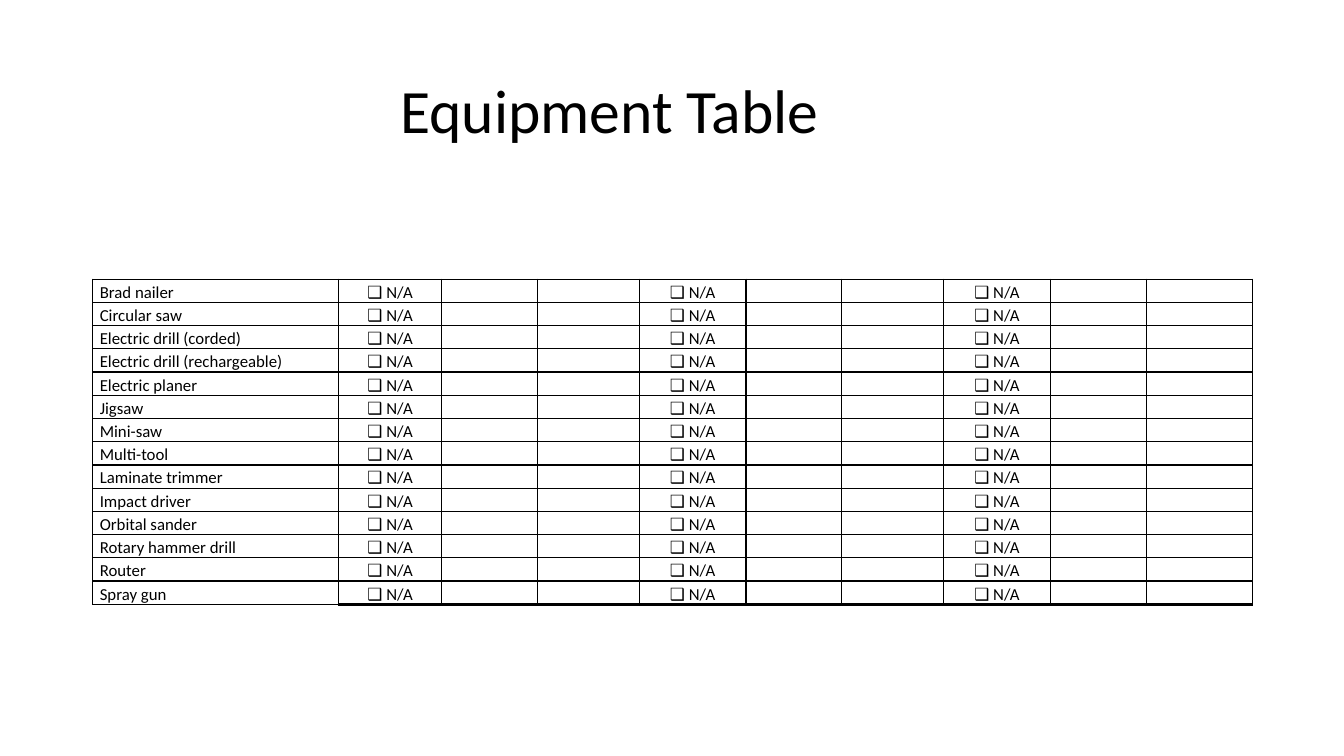
from lxml.etree import SubElement
from pptx import Presentation
from pptx.dml.color import RGBColor
from pptx.enum.text import MSO_ANCHOR as Anchor, PP_ALIGN as Align
from pptx.oxml.ns import qn
from pptx.util import Inches, Pt

COLORS = {"ink": "000000", "paper": "FFFFFF"}
TOOLS = [
    "Brad nailer", "Circular saw", "Electric drill (corded)",
    "Electric drill (rechargeable)", "Electric planer", "Jigsaw", "Mini-saw",
    "Multi-tool", "Laminate trimmer", "Impact driver", "Orbital sander",
    "Rotary hammer drill", "Router", "Spray gun",
]
COLUMN_WIDTHS = [2.44, 1.02, 0.95, 1.01, 1.06, 0.95, 1.01, 1.06, 0.95, 1.05]
CHECK_COLUMNS = (1, 4, 7)
CHECK_TEXT = "❑ N/A"
LEFT, WIDTH = 0.92, 11.5
TABLE_TOP, TABLE_HEIGHT = 2.77, 3.12
THIN, THICK = 1, 2.25


def set_all(target, values):
    for name, value in values.items():
        setattr(target, name, value)


class EquipmentPage:
    """Holds the text style and the slide being filled."""

    font_name = "Calibri"

    def __init__(self, deck):
        self.page = deck.slides.add_slide(deck.slide_layouts[6])
        fill = self.page.background.fill
        fill.solid()
        fill.fore_color.rgb = RGBColor.from_string(COLORS["paper"])

    def add_text(self, para, text, size, **layout):
        set_all(para, layout)
        span = para.add_run()
        span.text = text
        set_all(span.font, {"name": self.font_name, "size": Pt(size)})
        span.font.color.rgb = RGBColor.from_string(COLORS["ink"])

    def add_title(self, text, indent):
        box = self.page.shapes.add_textbox(
            Inches(LEFT), Inches(0.4), Inches(WIDTH), Inches(1.45))
        set_all(box.text_frame, {
            "word_wrap": True,
            "vertical_anchor": Anchor.MIDDLE,
            "margin_left": Inches(indent),
        })
        self.add_text(box.text_frame.paragraphs[0], text, 44, line_spacing=0.9)

    def add_borders(self, cell, widths):
        properties = cell._tc.get_or_add_tcPr()
        for side, width in widths.items():
            line = SubElement(properties, qn(f"a:ln{side}"), w=str(Pt(width)))
            fill = SubElement(line, qn("a:solidFill"))
            SubElement(fill, qn("a:srgbClr"), val=COLORS["ink"])

    def fill_cell(self, cell, text, align, anchor, bottom):
        set_all(cell, {
            "margin_left": Inches(0.07), "margin_right": Inches(0.07),
            "margin_top": 0, "margin_bottom": 0, "vertical_anchor": anchor,
        })
        self.add_borders(cell, {"L": THIN, "R": THIN, "T": THIN, "B": bottom})
        cell.fill.background()
        para = cell.text_frame.paragraphs[0]
        if text:
            self.add_text(para, text, 12, alignment=align, line_spacing=1.15)
        else:
            # A small paragraph mark keeps an empty cell from stretching its row.
            SubElement(para._p, qn("a:endParaRPr"), sz="1200")

    def add_equipment_table(self):
        table = self.page.shapes.add_table(
            len(TOOLS), len(COLUMN_WIDTHS), Inches(LEFT), Inches(TABLE_TOP),
            Inches(WIDTH), Inches(TABLE_HEIGHT)).table
        set_all(table, {"first_row": False, "horz_banding": False})
        for column, width in zip(table.columns, COLUMN_WIDTHS):
            column.width = Inches(width)
        for row, tool in enumerate(TOOLS):
            table.rows[row].height = Inches(TABLE_HEIGHT / len(TOOLS))
            for column in range(len(COLUMN_WIDTHS)):
                is_name = column == 0
                text = tool if is_name else CHECK_TEXT if column in CHECK_COLUMNS else ""
                centered = is_name or (tool == "Router" and text)
                is_last = tool == TOOLS[-1] and not is_name
                self.fill_cell(
                    table.cell(row, column), text,
                    align=Align.LEFT if is_name else Align.CENTER,
                    anchor=Anchor.MIDDLE if centered else Anchor.TOP,
                    bottom=THICK if is_last else THIN)


def main():
    deck = Presentation()
    set_all(deck, {"slide_width": Inches(13.33), "slide_height": Inches(7.5)})
    page = EquipmentPage(deck)
    page.add_title("Equipment Table", indent=3.05)
    page.add_equipment_table()
    deck.save("out.pptx")


if __name__ == "__main__":
    main()
